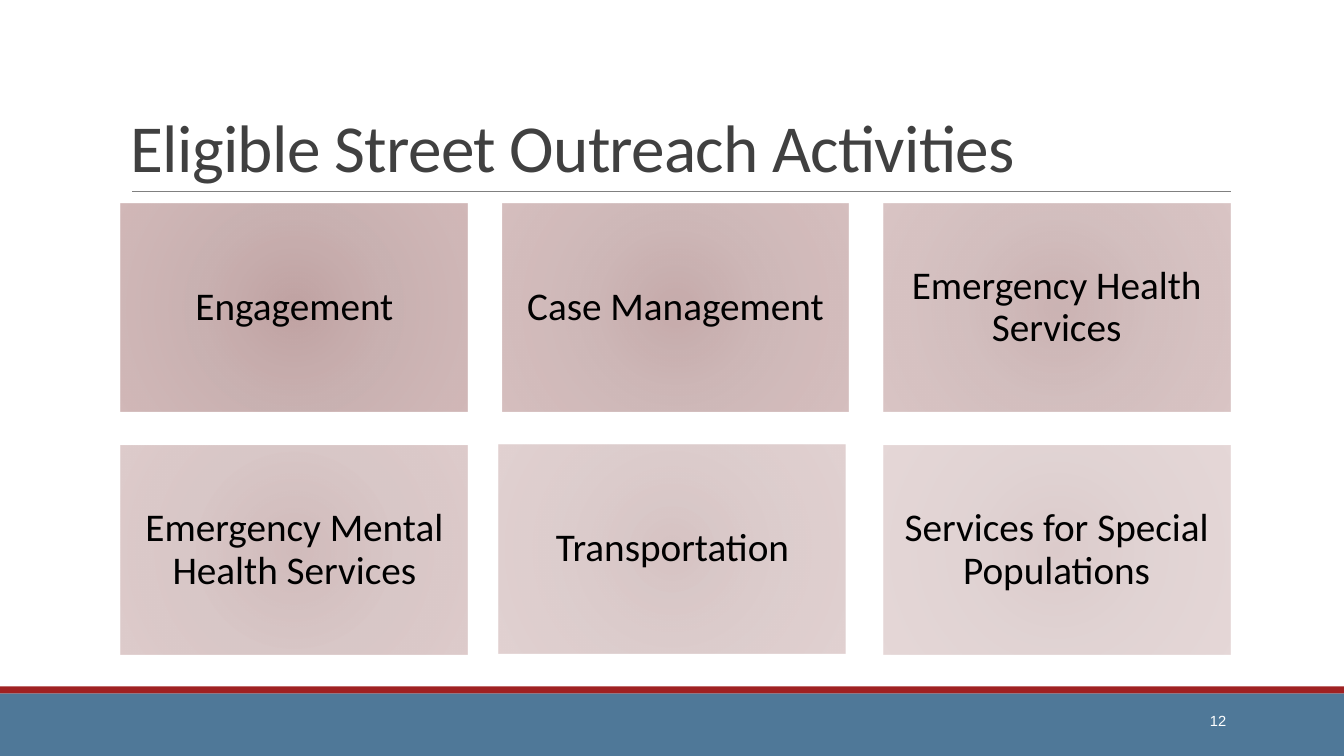
from lxml import etree
from pptx import Presentation
from pptx.dml.color import RGBColor
from pptx.enum.shapes import MSO_CONNECTOR, MSO_SHAPE
from pptx.enum.text import MSO_ANCHOR, PP_ALIGN
from pptx.oxml import parse_xml
from pptx.oxml.ns import nsdecls, qn
from pptx.util import Inches, Pt

RECT = MSO_SHAPE.RECTANGLE
STRAIGHT = MSO_CONNECTOR.STRAIGHT
MIDDLE, BOTTOM = MSO_ANCHOR.MIDDLE, MSO_ANCHOR.BOTTOM
LEFT, CENTER, RIGHT = PP_ALIGN.LEFT, PP_ALIGN.CENTER, PP_ALIGN.RIGHT

COLORS = {
    "title": "404040",
    "rule": "808080",
    "band": "4F7898",
    "strip": "9F2122",
    "card_text": "000000",
    "page": "FFFFFF",
}
CARD_STOPS = [(0, "BA9999"), (45, "C4A9A9"), (100, "CDB1B1")]
ACTIVITIES = [
    "Engagement",
    "Case Management",
    "Emergency Health Services",
    "Emergency Mental Health Services",
    "Transportation",
    "Services for Special Populations",
]
NUDGES = {"Transportation": (-0.03, -0.01)}


def write_text(shape, text, *, size, color, font="Calibri", align=LEFT, anchor=MIDDLE,
               line_spacing=1.0, insets=(0.1, 0.05), tracking=None):
    """Fill a shape with one formatted paragraph; tracking is in points."""
    frame = shape.text_frame
    frame.word_wrap = True
    frame.vertical_anchor = anchor
    frame.margin_left = frame.margin_right = Inches(insets[0])
    frame.margin_top = frame.margin_bottom = Inches(insets[1])
    paragraph = frame.paragraphs[0]
    paragraph.alignment = align
    paragraph.line_spacing = line_spacing
    run = paragraph.add_run()
    run.text = text
    run.font.name = font
    run.font.size = Pt(size)
    run.font.color.rgb = RGBColor.from_string(COLORS[color])
    if tracking is not None:
        run.font._element.set("spc", str(round(tracking * 100)))


def add_rect(slide, left, top, width, height):
    rect = slide.shapes.add_shape(RECT, Inches(left), Inches(top), Inches(width), Inches(height))
    rect.shadow.inherit = False
    rect.line.fill.background()
    return rect


def fill_radial(shape, opacity):
    """Give a shape the centred circular card gradient at an opacity in percent."""
    stops = "".join(
        f'<a:gs pos="{position * 1000}"><a:srgbClr val="{color}">'
        f'<a:alpha val="{opacity * 1000}"/></a:srgbClr></a:gs>'
        for position, color in CARD_STOPS
    )
    gradient = parse_xml(
        f'<a:gradFill {nsdecls("a")} rotWithShape="1"><a:gsLst>{stops}</a:gsLst>'
        '<a:path path="circle"><a:fillToRect l="100000" t="100000" r="100000" b="100000"/>'
        '</a:path></a:gradFill>'
    )
    shape._element.spPr.find(qn("a:prstGeom")).addnext(gradient)


def add_footer(slide, left, top, width):
    """Draw two overlapping layers of band and strip, then the slide number."""
    strip_height, band_height = 0.07, 0.5
    for layer_top in (top + 0.12, top):
        for color, y, height in (("band", layer_top + strip_height, band_height),
                                 ("strip", layer_top, strip_height)):
            bar = add_rect(slide, left, y, width, height)
            bar.fill.solid()
            bar.fill.fore_color.rgb = RGBColor.from_string(COLORS[color])
    number = slide.shapes.add_textbox(Inches(left + 10.83), Inches(top + 0.14),
                                      Inches(1.43), Inches(0.4))
    write_text(number, "12", size=10.5, color="page", font="Arial", align=RIGHT)


def add_title(slide, left, top, width, height):
    bottom = Inches(top + height)
    rule = slide.shapes.add_connector(STRAIGHT, Inches(left + 0.11), bottom,
                                      Inches(left + width + 0.01), bottom)
    rule.line.color.rgb = RGBColor.from_string(COLORS["rule"])
    rule.line.width = Pt(0.5)
    etree.SubElement(rule._element.spPr, qn("a:effectLst"))
    title = slide.shapes.add_textbox(Inches(left), Inches(top), Inches(width), Inches(height))
    write_text(title, "Eligible Street Outreach Activities", size=48, color="title",
               anchor=BOTTOM, line_spacing=0.85, tracking=-0.5)


def add_activities(slide, left, top, width, height, columns=3, rows=2):
    """Lay the activity cards in a grid, each fainter than the one before."""
    gap = 0.34
    card_width = (width - gap * (columns - 1)) / columns
    card_height = (height - gap * (rows - 1)) / rows
    for index, activity in enumerate(ACTIVITIES):
        row, column = divmod(index, columns)
        shift_x, shift_y = NUDGES.get(activity, (0, 0))
        card = add_rect(slide, left + column * (card_width + gap) + shift_x,
                        top + row * (card_height + gap) + shift_y, card_width, card_height)
        fill_radial(card, 90 - 8 * index)
        write_text(card, activity, size=28, color="card_text", align=CENTER,
                   line_spacing=0.9, insets=(0.12, 0.12))


def main():
    deck = Presentation()
    deck.slide_width, deck.slide_height = Inches(13.33), Inches(7.5)
    slide = deck.slides.add_slide(deck.slide_layouts[6])
    add_footer(slide, 0, 6.81, 13.33)
    add_title(slide, 1.2, 0.31, 11, 1.59)
    add_activities(slide, 1.2, 2.02, 11, 4.47)
    deck.save("out.pptx")


if __name__ == "__main__":
    main()
